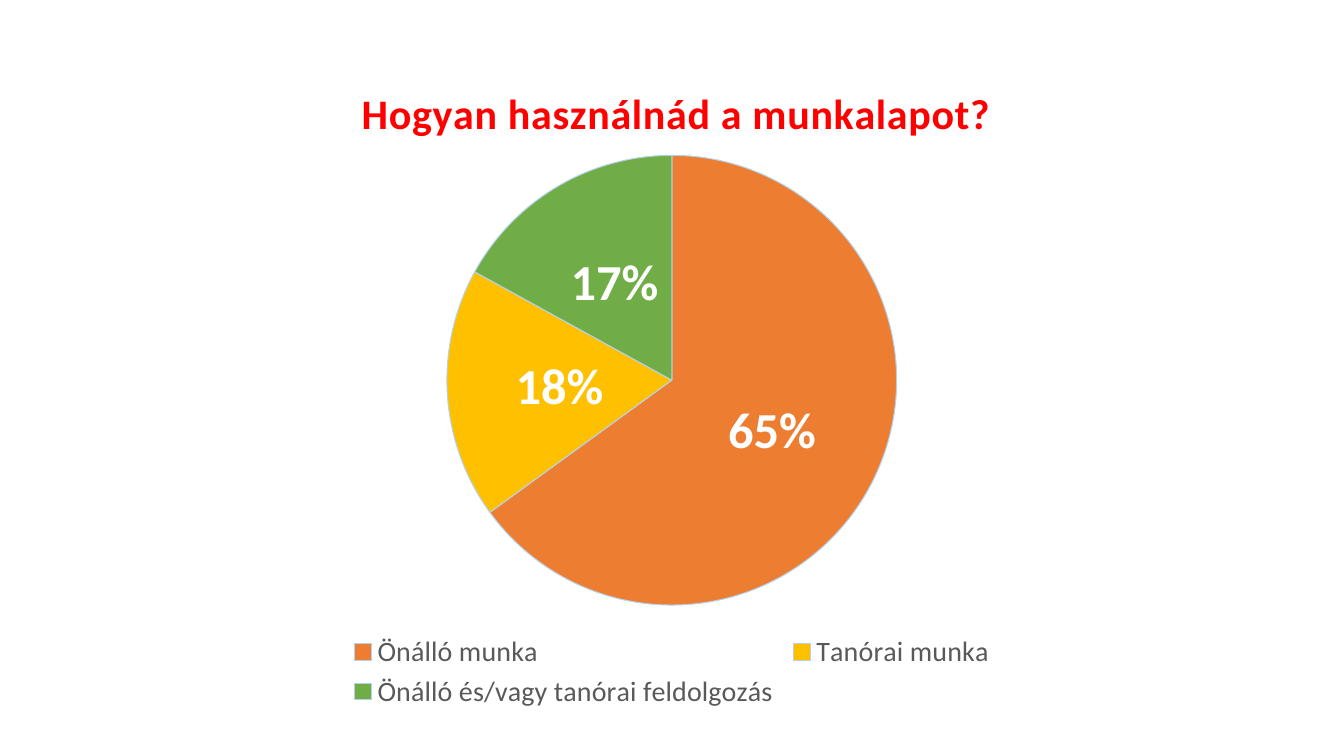
from dataclasses import dataclass

from pptx import Presentation
from pptx import util as u
from pptx.chart.data import CategoryChartData
from pptx.dml.color import RGBColor
from pptx.enum import chart as kinds
from pptx.oxml import parse_xml
from pptx.oxml.ns import nsdecls

FACE = "Calibri"


@dataclass
class Slice:
    name: str
    share: int
    color: str


SLICES = [
    Slice("Önálló munka", 65, "ED7D31"),
    Slice("Tanórai munka", 18, "FFC000"),
    Slice("Önálló és/vagy tanórai feldolgozás", 17, "70AD47"),
]


def tint(code: str) -> RGBColor:
    return RGBColor.from_string(code)


def style(font, size: float, color: str, bold: bool = False) -> None:
    font.name, font.size, font.bold = FACE, u.Pt(size), bold
    font.color.rgb = tint(color)


def write(frame, words: str, size: float, color: str, bold: bool = False,
          gap: int = 0) -> None:
    """Put one run in a text frame; gap is letter spacing in 1/100 pt."""
    run = frame.paragraphs[0].add_run()
    run.text = words
    style(run.font, size, color, bold)
    run.font._element.set("spc", str(gap))


def layout(inner: bool = False, **spots: float):
    """Build a manual layout from fractions of the chart area."""
    target = '<c:layoutTarget val="inner"/>' if inner else ""
    modes = "".join(f'<c:{k}Mode val="edge"/>' for k in spots if k in "xy")
    sizes = "".join(f'<c:{k} val="{v}"/>' for k, v in spots.items())
    return parse_xml(f'<c:layout {nsdecls("c")}><c:manualLayout>{target}{modes}'
                     f'{sizes}</c:manualLayout></c:layout>')


def place(part, spots, prior: str = "") -> None:
    """Set a chart part's layout, after the prior child or first."""
    for old in part.findall(spots.tag):
        part.remove(old)
    spot = 0
    if prior:
        spot = [child.tag.split("}")[1] for child in part].index(prior) + 1
    part.insert(spot, spots)


def draw_pie(slide) -> None:
    data = CategoryChartData()
    data.categories = [s.name for s in SLICES]
    data.add_series("Series 1", [s.share for s in SLICES])
    chart = slide.shapes.add_chart(
        kinds.XL_CHART_TYPE.PIE, u.Pt(113.75), u.Pt(31), u.Pt(732.25),
        u.Pt(478.8), data).chart
    style(chart.font, 10, "000000")

    # Title
    chart.has_title = True
    write(chart.chart_title.text_frame, "Hogyan használnád a munkalapot?",
          30, "FF0000", bold=True, gap=50)
    chart.chart_title.include_in_layout = False
    place(chart.chart_title._element, layout(x=0.19, y=0.05), "tx")

    # Slices
    plot = chart.plots[0]
    plot.vary_by_categories = True
    place(chart._chartSpace.chart.plotArea,
          layout(inner=True, x=0.28, y=0.167, w=0.44, h=0.671))
    for i, part in enumerate(SLICES):
        form = plot.series[0].points[i].format
        form.fill.solid()
        form.fill.fore_color.rgb = tint(part.color)
        form.line.color.rgb = tint("B5D2EC")
        form.line.width = u.Pt(0.75)

    # Labels
    labels = plot.series[0].data_labels
    labels.show_value = False
    labels.show_percentage = True
    labels.number_format, labels.number_format_is_linked = "0%", False
    labels.position = kinds.XL_LABEL_POSITION.CENTER
    style(labels.font, 36, "FFFFFF", bold=True)

    # Legend
    chart.has_legend = True
    legend = chart.legend
    legend.position = kinds.XL_LEGEND_POSITION.BOTTOM
    legend.include_in_layout = False
    style(legend.font, 20, "595959")
    place(legend._element, layout(x=0.18, y=0.875, w=0.64, h=0.125),
          "legendPos")


def main() -> None:
    deck = Presentation()
    deck.slide_width, deck.slide_height = u.Pt(960), u.Pt(540)
    draw_pie(deck.slides.add_slide(deck.slide_layouts[6]))
    deck.save("out.pptx")


if __name__ == "__main__":
    main()
